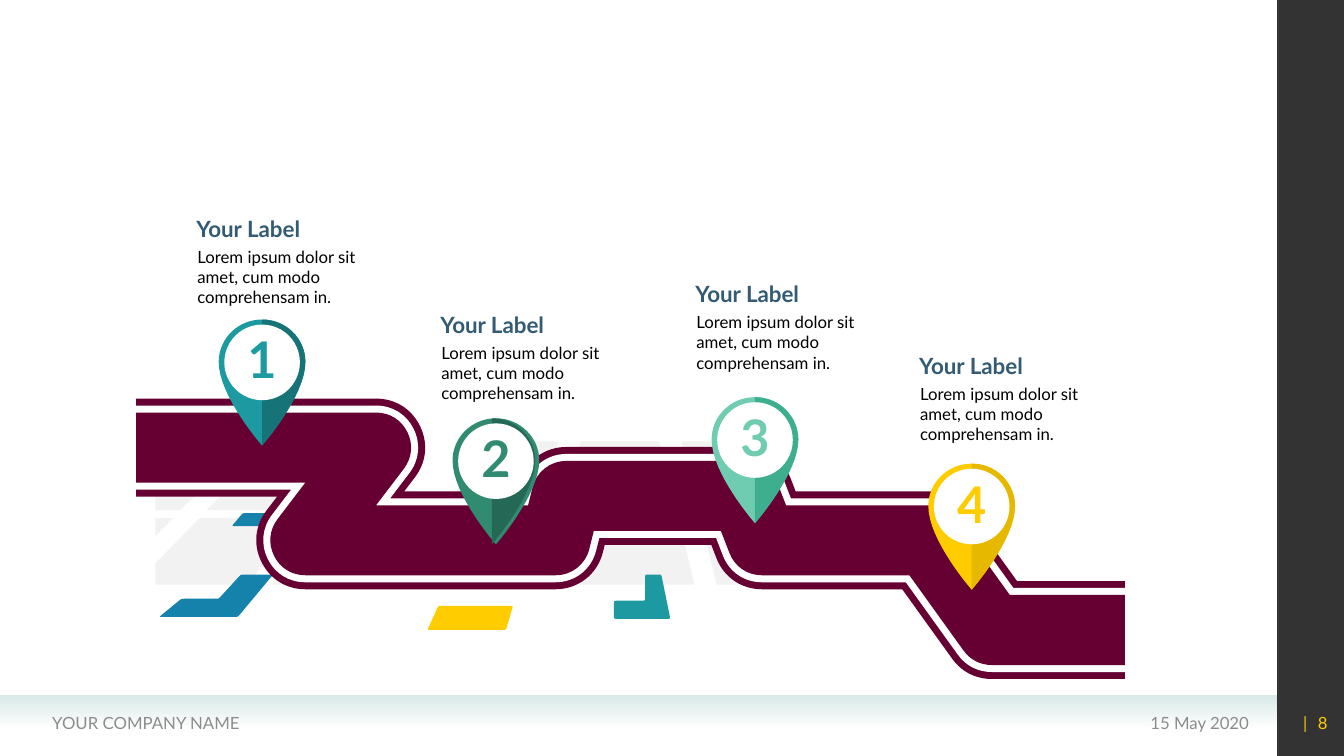
"""Build a four-stop road map slide with numbered pins and labels."""
from dataclasses import dataclass
from typing import NamedTuple

from lxml.etree import SubElement
from pptx import Presentation
from pptx.dml.color import RGBColor
from pptx.enum.shapes import MSO_SHAPE
from pptx.enum.text import MSO_ANCHOR, MSO_AUTO_SIZE, PP_ALIGN
from pptx.oxml.ns import qn
from pptx.util import Inches, Pt


class Point(NamedTuple):
    column: float
    row: float


class Area(NamedTuple):
    column: float
    row: float
    columns: float
    rows: float


@dataclass(frozen=True)
class Theme:
    font: str = "Lato"
    footer_size: int = 12
    body_size: int = 12
    heading_size: int = 16
    number_size: int = 36
    footer: str = "8C8C8C"
    heading: str = "335B74"
    body: str = "000000"
    side_bar: str = "000000"
    footer_band: str = "D9E9E8"
    road: str = "660033"
    white: str = "FFFFFF"
    block: str = "F2F2F2"
    blue: str = "1482AB"
    teal: str = "1D9AA1"
    yellow: str = "FFCC00"


@dataclass(frozen=True)
class Stop:
    number: str
    pin: Point
    label: Point
    light: str
    dark: str
    shade_shift: float = 0


@dataclass(frozen=True)
class Tile:
    color: str
    corners: list


@dataclass(frozen=True)
class RoadLayer:
    color: str
    width: int


THEME = Theme()
CELL = Inches(0.1)
SLIDE_COLUMNS, SLIDE_ROWS = 133.33, 75
CORNER = 0.4
CURVE_STEPS = 16

STOPS = [
    Stop("1", Point(26, 31.7), Point(18.5, 20.8), THEME.teal, "167479"),
    Stop("2", Point(49.2, 41.5), Point(42.7, 30.3), "318B71", "256855", -0.4),
    Stop("3", Point(74.9, 39.4), Point(68, 27.3), "70CCB1", "3EAF8E"),
    Stop("4", Point(96.4, 46), Point(90.2, 34.4), THEME.yellow, "E6B800"),
]
TILES = [
    Tile(THEME.yellow, [(43.5, 60.1), (50.9, 60.1), (50.2, 62.5), (42.4, 62.5)]),
    Tile(THEME.blue, [(23.9, 57), (27.1, 57), (23.6, 61.2), (15.8, 61.2), (18, 59.4), (21.7, 59.4)]),
    Tile(THEME.teal, [(64, 57), (65.6, 57), (66.5, 61.4), (60.9, 61.4), (60.9, 59.6), (64, 59.6)]),
    Tile(THEME.blue, [(24.1, 50.9), (26.8, 50.9), (25.9, 52.2), (23, 52.2)]),
]
BLOCKS = [
    [(43.2, 52.7), (53, 53), (51.7, 58), (40.5, 58)],
    [(82.3, 52.6), (91, 53.8), (95.2, 58), (85, 58)],
    [(69.5, 51.4), (74.4, 51.4), (79.9, 52.2), (82.7, 58), (71.1, 58)],
    [(55.7, 51.4), (67.3, 51.4), (68.9, 58), (54, 58)],
    [(31.8, 51.4), (33.7, 51.4), (33.2, 52.3), (41, 52.6), (38.2, 58), (27, 58)],
    [(19.8, 51.4), (29.4, 51.4), (24.6, 58), (15.4, 58), (15.4, 55.9)],
    [(15.4, 51.4), (17.2, 51.4), (15.4, 53.2)],
    [(67.6, 43.8), (75.8, 43.8), (79.1, 50.6), (69.3, 50.6)],
    [(57.6, 43.8), (65.4, 43.8), (67.1, 50.6), (55.9, 50.6)],
    [(47.9, 43.8), (55.4, 43.8), (53.6, 50.6), (44.3, 50.6)],
    [(27.3, 43.8), (28.8, 43.8), (34.7, 44.2), (29.9, 50.6), (20.5, 50.6)],
    [(16.5, 43.8), (24.7, 43.8), (17.9, 50.6), (15.4, 50.6), (15.4, 44.6)],
]
ROAD = [(13.5, 44.4), (37.3, 44.4), (30.3, 53.6), (55.1, 53.6), (56.2, 49.2),
        (73.9, 49.2), (75.6, 53.6), (92, 53.6), (98.4, 62.5), (111.6, 62.5)]
ROAD_LAYERS = [RoadLayer(THEME.road, 70), RoadLayer(THEME.white, 60), RoadLayer(THEME.road, 50)]


def cells(count: float) -> int:
    """Convert grid cells to slide units."""
    return round(count * CELL)


def bezier(start, first, second, end) -> list:
    """Return points along a cubic curve."""
    points = []
    for step in range(CURVE_STEPS + 1):
        t = step / CURVE_STEPS
        weights = ((1 - t) ** 3, 3 * t * (1 - t) ** 2, 3 * t * t * (1 - t), t ** 3)
        points.append(tuple(sum(w * p[axis] for w, p in zip(weights, (start, first, second, end)))
                            for axis in (0, 1)))
    return points


def rounded(corners: list) -> list:
    """Return the outline of a polygon with softened corners."""
    outline = []
    for index, corner in enumerate(corners):
        ends = []
        for neighbour in (corners[index - 1], corners[(index + 1) % len(corners)]):
            dx, dy = neighbour[0] - corner[0], neighbour[1] - corner[1]
            share = CORNER / (dx * dx + dy * dy) ** 0.5
            ends.append((corner[0] + dx * share, corner[1] + dy * share))
        outline += bezier(ends[0], corner, corner, ends[1])
    return outline


def paint(shape, color: str) -> None:
    """Give a shape a plain fill without line or shadow."""
    shape.shadow.inherit = False
    shape.fill.solid()
    shape.fill.fore_color.rgb = RGBColor.from_string(color)
    shape.line.fill.background()


def set_last_alpha(shape, percent: int) -> None:
    """Set the opacity of the last colour in a shape."""
    last_color = shape._element.spPr.findall(".//" + qn("a:srgbClr"))[-1]
    SubElement(last_color, qn("a:alpha")).set("val", str(percent * 1000))


def add_outline(slide, contours: list, close: bool = True):
    """Draw one freeform from contours given in cells."""
    scaled = [[(cells(x), cells(y)) for x, y in contour] for contour in contours]
    builder = slide.shapes.build_freeform(*scaled[0][0], scale=1.0)
    for index, contour in enumerate(scaled):
        if index:
            builder.move_to(*contour[0])
        builder.add_line_segments(contour[1:], close=close)
    return builder.convert_to_shape()


def add_preset(slide, kind, area: Area, color: str):
    """Draw a filled preset shape."""
    shape = slide.shapes.add_shape(kind, *map(cells, area))
    paint(shape, color)
    return shape


def add_text(slide, area: Area, text: str, size: int, color: str, bold: bool = False,
             align=PP_ALIGN.LEFT, anchor=MSO_ANCHOR.MIDDLE, wrap: bool = True, grow: bool = False):
    """Add one paragraph of text and return it."""
    frame = slide.shapes.add_textbox(*map(cells, area)).text_frame
    frame.word_wrap = wrap
    frame.vertical_anchor = anchor
    frame.auto_size = MSO_AUTO_SIZE.SHAPE_TO_FIT_TEXT if grow else MSO_AUTO_SIZE.NONE
    paragraph = frame.paragraphs[0]
    paragraph.text = text
    paragraph.alignment = align
    font = paragraph.font
    font.name, font.size, font.bold = THEME.font, Pt(size), bold
    font.color.rgb = RGBColor.from_string(color)
    return paragraph


def add_frame(slide) -> None:
    """Draw the footer band, side bar and footer texts."""
    band = add_preset(slide, MSO_SHAPE.RECTANGLE, Area(0, 69, 126.7, 3.1), THEME.footer_band)
    band.fill.gradient()
    band.fill.gradient_angle = 270
    for position, stop in enumerate(band.fill.gradient_stops):
        stop.position = position
        stop.color.rgb = RGBColor.from_string(THEME.footer_band)
    set_last_alpha(band, 0)
    side = add_preset(slide, MSO_SHAPE.RECTANGLE, Area(126.7, 0, 6.63, SLIDE_ROWS), THEME.side_bar)
    set_last_alpha(side, 80)
    add_text(slide, Area(91, 69.7, 33.9, 4), "15 May 2020", THEME.footer_size, THEME.footer, align=PP_ALIGN.RIGHT)
    add_text(slide, Area(4.2, 69.7, 49, 4), "YOUR COMPANY NAME", THEME.footer_size, THEME.footer)
    page = add_text(slide, Area(126, 69.7, 6.7, 4), "| ", THEME.footer_size, THEME.yellow, align=PP_ALIGN.RIGHT)
    page.runs[0]._r.get_or_add_rPr().set("spc", "230")
    page.add_run().text = "8"


def add_road(slide) -> None:
    """Draw the layered road over its blocks and tiles."""
    paint(add_outline(slide, BLOCKS), THEME.block)
    for tile in TILES:
        paint(add_outline(slide, [rounded(tile.corners)]), tile.color)
    for layer in ROAD_LAYERS:
        road = add_outline(slide, [ROAD], close=False)
        road.shadow.inherit = False
        road.fill.background()
        road.line.color.rgb = RGBColor.from_string(layer.color)
        road.line.width = Pt(layer.width)
        SubElement(road.line._get_or_add_ln(), qn("a:round"))


def add_stop(slide, stop: Stop) -> None:
    """Draw one pin with its number and label."""
    x, y = stop.pin
    half = (bezier((0, 0), (2.4, 0), (4.3, 1.9), (4.3, 4.2))
            + bezier((4.3, 4.2), (4.3, 7.6), (0, 12.5), (0, 12.5)))
    right = [(x + dx, y + dy) for dx, dy in half]
    left = [(x - dx, y + dy) for dx, dy in reversed(half)]
    paint(add_outline(slide, [right + left]), stop.light)
    paint(add_outline(slide, [[(px + stop.shade_shift, py) for px, py in right]]), stop.dark)
    add_preset(slide, MSO_SHAPE.OVAL, Area(x - 3.75, y + 0.5, 7.5, 7.5), THEME.white)
    add_text(slide, Area(x - 2.6, y + 0.4, 5.2, 7.1), stop.number, THEME.number_size, stop.light,
             bold=True, align=PP_ALIGN.CENTER, anchor=MSO_ANCHOR.TOP, wrap=False, grow=True)
    column, row = stop.label
    add_text(slide, Area(column, row, 12.5, 3.7), "Your Label", THEME.heading_size, THEME.heading,
             bold=True, anchor=MSO_ANCHOR.BOTTOM, wrap=False, grow=True)
    body = add_text(slide, Area(column + 0.1, row + 3.05, 18.6, 7.1),
                    "Lorem ipsum dolor sit amet, cum modo comprehensam in.", THEME.body_size, THEME.body,
                    anchor=MSO_ANCHOR.BOTTOM, grow=True)
    body.space_before = Pt(2.4)


def main() -> None:
    """Create and save the presentation."""
    deck = Presentation()
    deck.slide_width, deck.slide_height = cells(SLIDE_COLUMNS), cells(SLIDE_ROWS)
    slide = deck.slides.add_slide(deck.slide_layouts[6])
    add_frame(slide)
    add_road(slide)
    for stop in STOPS:
        add_stop(slide, stop)
    deck.save("out.pptx")


if __name__ == "__main__":
    main()
